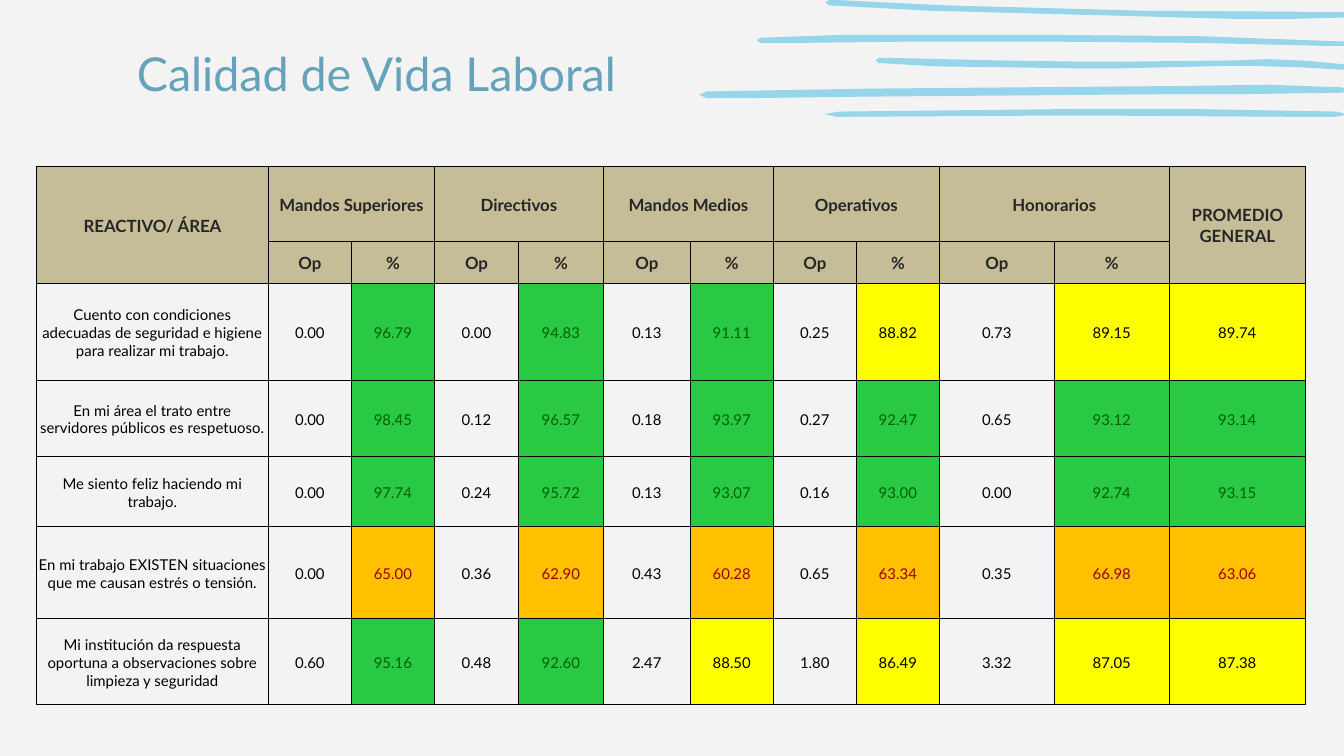
from pptx import Presentation
from pptx.dml.color import RGBColor
from pptx.enum.text import MSO_ANCHOR, PP_ALIGN
from pptx.oxml import parse_xml
from pptx.oxml.ns import nsdecls
from pptx.util import Pt

MIDDLE = MSO_ANCHOR.MIDDLE
CENTER, RIGHT = PP_ALIGN.CENTER, PP_ALIGN.RIGHT

FONT = "Lato"
BACKGROUND = RGBColor(0xF3, 0xF3, 0xF3)
SKY = RGBColor(0x97, 0xD5, 0xEA)
TITLE_BLUE = RGBColor(0x66, 0xA2, 0xB9)
TAN = RGBColor(0xC4, 0xBD, 0x97)
CHARCOAL = RGBColor(0x26, 0x26, 0x26)
BLACK = RGBColor(0, 0, 0)
GREEN = RGBColor(0x29, 0xC9, 0x44)
DARK_GREEN = RGBColor(0, 0x61, 0)
YELLOW = RGBColor(0xFF, 0xFF, 0)
ORANGE = RGBColor(0xFF, 0xC0, 0)
DARK_RED = RGBColor(0x9C, 0, 0x06)

HEADER_FONT = {"name": FONT, "size": Pt(9), "bold": True}
BODY_FONT = {"name": FONT, "size": Pt(8), "bold": False}
TITLE_FONT = {"name": FONT, "size": Pt(25)}
CELL_FORMAT = {"margin_left": Pt(0.7), "margin_right": Pt(0.7),
               "margin_top": Pt(0.7), "margin_bottom": Pt(0),
               "vertical_anchor": MIDDLE}

# Outlines of the brush strokes, top to bottom
STROKES = [
    [(693.4, 10.1), (721.4, 9.4), (722.9, 8), (721.4, 6.5), (613.4, 5.8),
     (506.2, 2.9), (475.2, 1.4), (447.8, 0), (444.2, 0), (442.2, 1.4),
     (444.2, 2.9), (498.2, 5.8), (551.5, 7.2), (659.5, 10.1)],
    [(707.8, 24.5), (721.4, 24.5), (722.9, 23.4), (721.4, 22.3), (643, 19.4),
     (564.5, 18.7), (450.7, 18.7), (407.5, 20.2), (405.5, 21.6), (407.5, 23),
     (427, 23), (486, 22.3), (564.5, 22.3), (643, 23)],
    [(721, 37.4), (722.9, 36), (721.4, 34.6), (700, 32.6), (679, 31.7),
     (661.7, 32.4), (597.6, 33.1), (583.2, 33.1), (535, 32.4), (475.2, 31),
     (470.9, 31), (469, 32.4), (470.9, 33.8), (502, 35.6), (533.5, 36),
     (581.8, 36.7), (596.9, 36.7), (658.8, 35.3), (668.9, 35.3), (694.8, 36)],
    [(400.3, 52.6), (463.7, 51.8), (550.8, 51.1), (635.8, 50.4), (670.3, 50.4),
     (719.3, 49.7), (722.5, 48.2), (718.6, 46.8), (679.7, 45.4), (633.6, 46.1),
     (547.9, 46.8), (465.8, 47.5), (378.7, 49), (374.4, 50.8), (378.7, 52.6)],
    [(694.8, 62.6), (715, 62.6), (722, 61.5), (716.4, 59.8), (631.4, 58.3),
     (586.1, 58.3), (449.3, 59.8), (441.5, 61.2), (448.6, 62.6),
     (570.2, 61.9), (582.5, 61.9)],
]

COLUMNS = [124.3, 44.5, 44.5, 45, 45.5, 46.6, 44.5, 44.5, 44.5, 61.6, 61.6, 72.9]
ROWS = [40.2, 17.3, 52, 41, 37.5, 49.3, 46]
AREAS = ["Mandos Superiores", "Directivos", "Mandos Medios", "Operativos", "Honorarios"]
# Each item: statement, then Op and % by area, then the general average
ITEMS = [
    ("Cuento con condiciones adecuadas de seguridad e higiene para realizar mi trabajo.",
     0, 96.79, 0, 94.83, 0.13, 91.11, 0.25, 88.82, 0.73, 89.15, 89.74),
    ("En mi área el trato entre servidores públicos es respetuoso.",
     0, 98.45, 0.12, 96.57, 0.18, 93.97, 0.27, 92.47, 0.65, 93.12, 93.14),
    ("Me siento feliz haciendo mi trabajo.",
     0, 97.74, 0.24, 95.72, 0.13, 93.07, 0.16, 93, 0, 92.74, 93.15),
    ("En mi trabajo EXISTEN situaciones que me causan estrés o tensión.",
     0, 65, 0.36, 62.9, 0.43, 60.28, 0.65, 63.34, 0.35, 66.98, 63.06),
    ("Mi institución da respuesta oportuna a observaciones sobre limpieza y seguridad",
     0.6, 95.16, 0.48, 92.6, 2.47, 88.5, 1.8, 86.49, 3.32, 87.05, 87.38),
]


def apply(target, values):
    for name, value in values.items():
        setattr(target, name, value)


def write(frame, text, font, color, align):
    para = frame.paragraphs[0]
    para.alignment = align
    span = para.add_run()
    span.text = text
    apply(span.font, font)
    span.font.color.rgb = color


def add_stroke(page, points):
    builder = page.shapes.build_freeform(Pt(points[0][0]), Pt(points[0][1]))
    builder.add_line_segments([(Pt(x), Pt(y)) for x, y in points[1:]], close=True)
    stroke = builder.convert_to_shape()
    stroke.shadow.inherit = False
    stroke.fill.solid()
    stroke.fill.fore_color.rgb = SKY
    stroke.line.fill.background()


def add_title(page, text):
    box = page.shapes.add_textbox(Pt(-68.4), Pt(16.6), Pt(405.4), Pt(44.6))
    apply(box.text_frame, {"word_wrap": True, "vertical_anchor": MIDDLE})
    for side in ("left", "right", "top", "bottom"):
        setattr(box.text_frame, f"margin_{side}", Pt(7.2))
    write(box.text_frame, text, TITLE_FONT, TITLE_BLUE, RIGHT)


def style_cell(cell, fill=None):
    apply(cell, CELL_FORMAT)
    properties = cell._tc.get_or_add_tcPr()
    for side in "LRTB":
        properties.append(parse_xml(
            f'<a:ln{side} {nsdecls("a")} w="{Pt(0.5)}"><a:solidFill>'
            f'<a:srgbClr val="{BLACK}"/></a:solidFill></a:ln{side}>'))
    if fill is None:
        cell.fill.background()
    else:
        cell.fill.solid()
        cell.fill.fore_color.rgb = fill


def rating(score):
    """Return the fill and text colours of a percentage."""
    if score >= 90:
        return GREEN, DARK_GREEN
    return (YELLOW, BLACK) if score >= 70 else (ORANGE, DARK_RED)


def fill_header(table):
    last = len(COLUMNS) - 1
    for row in range(2):
        for column in range(last + 1):
            style_cell(table.cell(row, column), TAN)
    labels = {(0, 0): "REACTIVO/ ÁREA", (0, last): "PROMEDIO GENERAL"}
    for column in (0, last):
        table.cell(0, column).merge(table.cell(1, column))
    for index, area in enumerate(AREAS):
        left = 1 + 2 * index
        table.cell(0, left).merge(table.cell(0, left + 1))
        labels.update({(0, left): area, (1, left): "Op", (1, left + 1): "%"})
    for place, label in labels.items():
        write(table.cell(*place).text_frame, label, HEADER_FONT, CHARCOAL, CENTER)


def fill_body(table):
    for row, item in enumerate(ITEMS, start=2):
        for column, value in enumerate(item):
            is_score = column > 0 and (column % 2 == 0 or column == len(item) - 1)
            fill, color = rating(value) if is_score else (None, BLACK)
            cell = table.cell(row, column)
            style_cell(cell, fill)
            text = f"{value:.2f}" if column else value
            write(cell.text_frame, text, BODY_FONT, color, CENTER)


def add_results(page):
    table = page.shapes.add_table(len(ROWS), len(COLUMNS), Pt(19.5), Pt(89.2),
                                  Pt(sum(COLUMNS)), Pt(sum(ROWS))).table
    apply(table, {"first_row": False, "horz_banding": False})
    for column, width in zip(table.columns, COLUMNS):
        column.width = Pt(width)
    for row, height in zip(table.rows, ROWS):
        row.height = Pt(height)
    fill_header(table)
    fill_body(table)


def main():
    deck = Presentation()
    apply(deck, {"slide_width": Pt(720), "slide_height": Pt(405)})
    page = deck.slides.add_slide(deck.slide_layouts[6])
    page.background.fill.solid()
    page.background.fill.fore_color.rgb = BACKGROUND
    for points in reversed(STROKES):
        add_stroke(page, points)
    add_title(page, "Calidad de Vida Laboral")
    add_results(page)
    deck.save("out.pptx")


if __name__ == "__main__":
    main()
